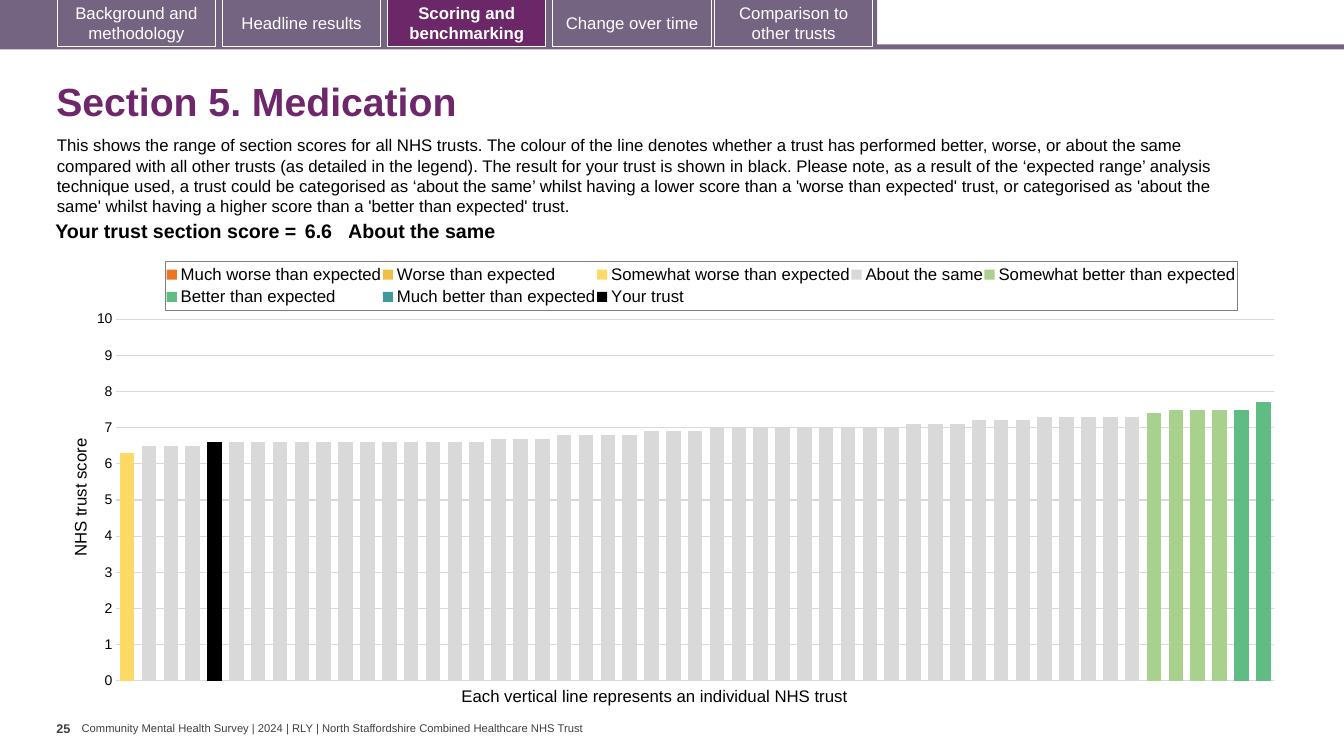
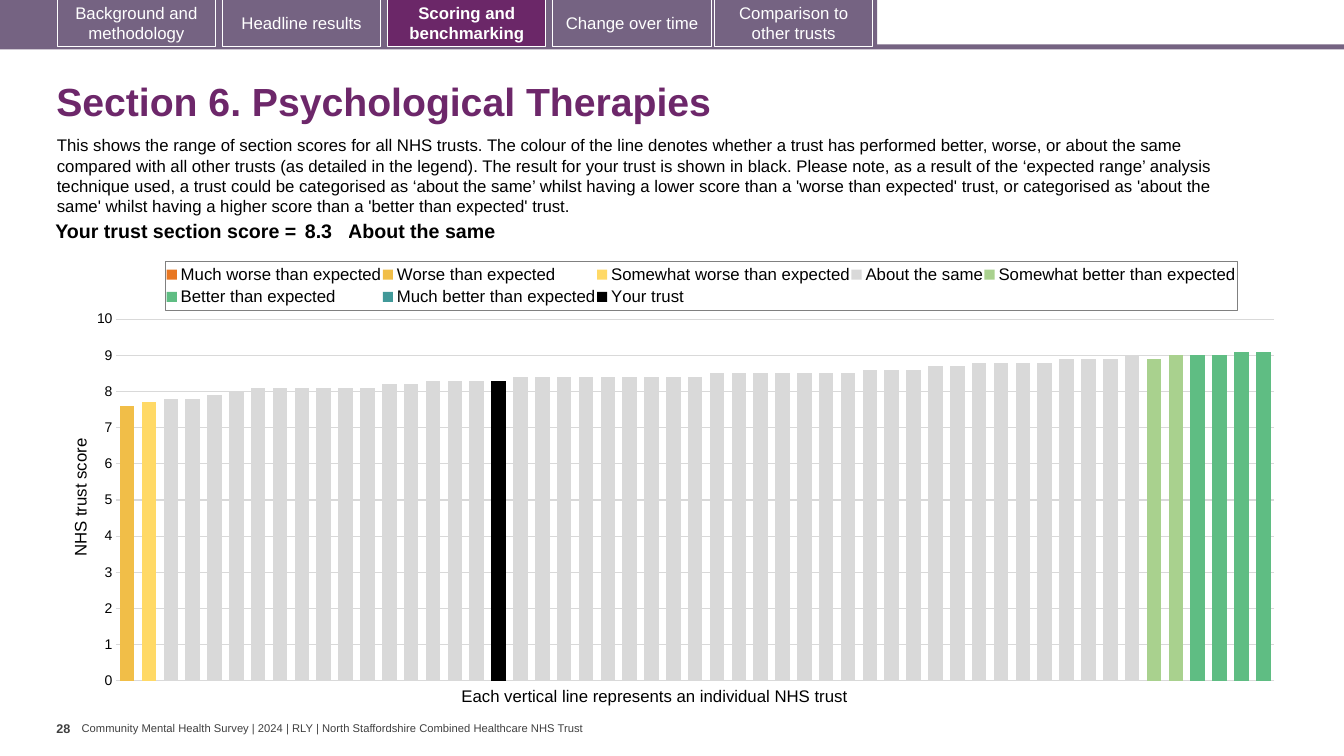
"""Builds two section score slides of a survey benchmark report."""
import copy
import dataclasses

import pptx
import pptx.chart.data
import pptx.dml.color
import pptx.enum.chart
import pptx.enum.shapes
import pptx.enum.text
import pptx.oxml
import pptx.oxml.ns
import pptx.util

Pt = pptx.util.Pt
qn = pptx.oxml.ns.qn
ALIGN = pptx.enum.text.PP_ALIGN
ANCHOR = pptx.enum.text.MSO_ANCHOR


@dataclasses.dataclass(frozen=True)
class Theme:
    """Colours, fonts and type sizes shared by the slides."""
    band: str = "756382"
    active: str = "6B2768"
    title: str = "6D276A"
    text: str = "000000"
    footer: str = "404040"
    grid: str = "D9D9D9"
    legend_line: str = "808080"
    white: str = "FFFFFF"
    font: str = "Arial"
    chart_font: str = "Calibri"
    title_size: int = 28
    score_size: int = 14
    body_size: int = 12
    axis_size: int = 10
    number_size: int = 9
    footer_size: int = 8


THEME = Theme()
TABS = [("Background and methodology", 41), ("Headline results", 159),
        ("Scoring and benchmarking", 277), ("Change over time", 395),
        ("Comparison to other trusts", 510.5)]
ACTIVE_TAB = "Scoring and benchmarking"
BAND_COLOURS = {
    "Much worse than expected": "E87722",
    "Worse than expected": "F1BE48",
    "Somewhat worse than expected": "FFD966",
    "About the same": "D9D9D9",
    "Somewhat better than expected": "A9D18E",
    "Better than expected": "5FBD83",
    "Much better than expected": "419999",
}
OWN_TRUST = "Your trust"
INTRO = (
    "This shows the range of section scores for all NHS trusts. The colour of the line denotes "
    "whether a trust has performed better, worse, or about the same compared with all other "
    "trusts (as detailed in the legend). The result for your trust is shown in black. Please "
    "note, as a result of the ‘expected range’ analysis technique used, a trust could be "
    "categorised as ‘about the same’ whilst having a lower score than a 'worse than expected' "
    "trust, or categorised as 'about the same' whilst having a higher score than a 'better than "
    "expected' trust.")
FOOTER = ("Community Mental Health Survey | 2024 | RLY | "
          "North Staffordshire Combined Healthcare NHS Trust")


@dataclasses.dataclass(frozen=True)
class Section:
    """One section: bands hold how many trusts have each score, in rank order."""
    title: str
    page: str
    score: float
    rank: int
    bands: dict
    verdict: str = "About the same"


SECTIONS = [
    Section("Section 5. Medication", "25", 6.6, 5, {
        "Somewhat worse than expected": {6.3: 1},
        "About the same": {6.5: 3, 6.6: 13, 6.7: 3, 6.8: 4, 6.9: 3, 7: 9, 7.1: 3, 7.2: 3, 7.3: 5},
        "Somewhat better than expected": {7.4: 1, 7.5: 3},
        "Better than expected": {7.5: 1, 7.7: 1},
    }),
    Section("Section 6. Psychological Therapies", "28", 8.3, 18, {
        "Worse than expected": {7.6: 1},
        "Somewhat worse than expected": {7.7: 1},
        "About the same": {7.8: 2, 7.9: 1, 8: 1, 8.1: 6, 8.2: 2, 8.3: 4, 8.4: 9, 8.5: 7,
                           8.6: 3, 8.7: 2, 8.8: 4, 8.9: 3, 9: 1},
        "Somewhat better than expected": {8.9: 1, 9: 1},
        "Better than expected": {9: 2, 9.1: 2},
    }),
]


def rgb(colour):
    """Return a colour object for a hex string."""
    return pptx.dml.color.RGBColor.from_string(colour)


def style_font(font, size, colour=THEME.text, bold=False, name=THEME.font):
    """Set the face, size, colour and weight of a font."""
    font.name, font.size, font.bold = name, Pt(size), bold
    font.color.rgb = rgb(colour)


def write(frame, text, size, colour=THEME.text, bold=False, align=ALIGN.LEFT):
    """Put one formatted paragraph in a text frame."""
    frame.text = text
    frame.word_wrap = True
    paragraph = frame.paragraphs[0]
    paragraph.alignment = align
    for run in paragraph.runs:
        style_font(run.font, size, colour, bold)


def set_margins(holder, across, down):
    """Set the side margins and the top and bottom margins of a frame or cell."""
    holder.margin_left = holder.margin_right = Pt(across)
    holder.margin_top = holder.margin_bottom = Pt(down)


def add_label(slide, box, text, size, colour=THEME.text, bold=False):
    """Add a text box and return its frame."""
    frame = slide.shapes.add_textbox(*map(Pt, box)).text_frame
    write(frame, text, size, colour, bold)
    return frame


def add_block(slide, box, colour, outline=None):
    """Add a filled rectangle."""
    block = slide.shapes.add_shape(pptx.enum.shapes.MSO_SHAPE.RECTANGLE, *map(Pt, box))
    block.shadow.inherit = False
    block.fill.solid()
    block.fill.fore_color.rgb = rgb(colour)
    if outline:
        block.line.color.rgb = rgb(outline)
        block.line.width = Pt(0.75)
    else:
        block.line.fill.background()
    return block


def add_navigation(slide, box):
    """Draw the tab bar with the current tab highlighted."""
    left, top, width, height = box
    add_block(slide, (left, top + height - 3.6, width, 3.6), THEME.band)
    add_block(slide, (left, top, 626.5, height - 1.5), THEME.band)
    for label, offset in TABS:
        current = label == ACTIVE_TAB
        tab = add_block(slide, (left + offset, top - 0.7, 113, height - 1.5),
                        THEME.active if current else THEME.band, THEME.white)
        write(tab.text_frame, label, THEME.body_size, THEME.white, current, ALIGN.CENTER)
        tab.text_frame.vertical_anchor = ANCHOR.MIDDLE


def add_heading(slide, box, text):
    """Place and format the title placeholder."""
    title = slide.shapes.title
    title.left, title.top, title.width, title.height = map(Pt, box)
    write(title.text_frame, text, THEME.title_size, THEME.title, True)
    title.text_frame.vertical_anchor = ANCHOR.MIDDLE
    title.text_frame.paragraphs[0].line_spacing = 0.9


def add_footer(slide, box, page):
    """Add the page number and the survey line."""
    left, top, width, height = box
    number = add_label(slide, (left, top, 18, height), page,
                       THEME.number_size, THEME.footer, True)
    set_margins(number, 0, 3.6)
    survey = add_label(slide, (left + 18, top + 4.3, width - 18, 9.5), FOOTER,
                       THEME.footer_size, THEME.footer)
    set_margins(survey, 0, 0)
    survey.vertical_anchor = ANCHOR.MIDDLE


def add_score_line(slide, box, section):
    """Add the one-row table with the score and verdict of the trust."""
    left, top, width, height = box
    table = slide.shapes.add_table(1, 3, *map(Pt, box)).table
    table.first_row = table.horz_banding = False
    table.rows[0].height = Pt(height)
    entries = [("Your trust section score =", 189.4, 2.9, ALIGN.RIGHT),
               (str(section.score), 33.8, 2.9, ALIGN.LEFT),
               (section.verdict, width - 223.2, 0, ALIGN.LEFT)]
    for index, (text, column_width, margin, align) in enumerate(entries):
        table.columns[index].width = Pt(column_width)
        cell = table.cell(0, index)
        cell.fill.background()
        set_margins(cell, margin, 2.9)
        write(cell.text_frame, text, THEME.score_size, bold=True, align=align)


def manual_layout(target="", **sizes):
    """Return a chart layout element placed by fractions of the chart."""
    inner = f'<c:layoutTarget val="{target}"/>' if target else ""
    modes = '<c:xMode val="edge"/><c:yMode val="edge"/>'
    values = "".join(f'<c:{key} val="{value}"/>' for key, value in sizes.items())
    return pptx.oxml.parse_xml(
        f'<c:layout {pptx.oxml.ns.nsdecls("c")}><c:manualLayout>'
        f'{inner}{modes}{values}</c:manualLayout></c:layout>')


def set_layout(parent, after, layout):
    """Replace the layout of a chart part, after the named child."""
    for old in parent.findall(qn("c:layout")):
        parent.remove(old)
    if after:
        parent.find(qn(after)).addnext(layout)
    else:
        parent.insert(0, layout)


def score_data(section):
    """Return chart data with a series for each band and one for the own trust."""
    total = sum(sum(counts.values()) for counts in section.bands.values())
    data = pptx.chart.data.CategoryChartData()
    data.categories = [str(rank) for rank in range(1, total + 1)]
    start = 0
    for band in BAND_COLOURS:
        scores = [score for score, count in section.bands.get(band, {}).items()
                  for _ in range(count)]
        data.add_series(band, [None] * start + scores + [None] * (total - start - len(scores)))
        start += len(scores)
    data.add_series(OWN_TRUST, [section.score if rank == section.rank else None
                                for rank in range(1, total + 1)])
    return data


def move_own_trust_to_second_axis(plot_area):
    """Give the last series its own bars and hidden axes in front of the others."""
    bars = plot_area.find(qn("c:barChart"))
    axes = [plot_area.find(qn(tag)) for tag in ("c:catAx", "c:valAx")]
    front_bars, front_categories, front_values = map(copy.deepcopy, [bars, *axes])
    ids = {axis.find(qn("c:axId")).get("val"): str(501 + index)
           for index, axis in enumerate(axes)}
    for part in (front_bars, front_categories, front_values):
        for node in part.iter(qn("c:axId"), qn("c:crossAx")):
            node.set("val", ids[node.get("val")])
    for series in front_bars.findall(qn("c:ser"))[:-1]:
        front_bars.remove(series)
    bars.remove(bars.findall(qn("c:ser"))[-1])
    front_values.find(qn("c:crosses")).set("val", "max")
    front_values.find(qn("c:tickLblPos")).set("val", "none")
    bars.addnext(front_bars)
    axes[1].addnext(front_values)
    front_values.addnext(front_categories)


def add_score_chart(slide, box, section):
    """Add the ranked column chart of trust scores."""
    chart = slide.shapes.add_chart(pptx.enum.chart.XL_CHART_TYPE.COLUMN_CLUSTERED,
                                   *map(Pt, box), score_data(section)).chart
    style_font(chart.font, THEME.axis_size, name=THEME.chart_font)
    chart.has_title = False
    plot = chart.plots[0]
    plot.gap_width, plot.overlap, plot.vary_by_categories = 50, 100, False
    for series, colour in zip(plot.series, [*BAND_COLOURS.values(), THEME.text]):
        series.format.fill.solid()
        series.format.fill.fore_color.rgb = rgb(colour)
    chart.category_axis.visible = False

    axis = chart.value_axis
    axis.minimum_scale, axis.maximum_scale, axis.major_unit = 0, 10, 1
    axis.major_tick_mark = pptx.enum.chart.XL_TICK_MARK.NONE
    axis.tick_label_position = pptx.enum.chart.XL_TICK_LABEL_POSITION.NEXT_TO_AXIS
    axis.format.line.fill.background()
    style_font(axis.tick_labels.font, THEME.axis_size)
    axis.has_major_gridlines = False
    plot_area = chart.element.find(".//" + qn("c:plotArea"))
    move_own_trust_to_second_axis(plot_area)
    set_layout(plot_area, None, manual_layout("inner", x=0.05, y=0.16, w=0.94, h=0.81))

    axis.has_major_gridlines = True
    axis.major_gridlines.format.line.color.rgb = rgb(THEME.grid)
    axis.major_gridlines.format.line.width = Pt(0.75)
    write(axis.axis_title.text_frame, "NHS trust score", THEME.body_size)
    set_layout(plot_area.find(".//" + qn("c:title")), "c:tx", manual_layout(x=0.01, y=0.42))
    add_legend(chart)


def add_legend(chart):
    """Add the outlined legend above the columns."""
    chart.has_legend = True
    chart.legend.position = pptx.enum.chart.XL_LEGEND_POSITION.TOP
    chart.legend.include_in_layout = False
    style_font(chart.legend.font, THEME.body_size)
    legend = chart.element.find(".//" + qn("c:legend"))
    set_layout(legend, "c:legendPos", manual_layout(x=0.09, y=0.03, w=0.87, h=0.11))
    legend.find(qn("c:overlay")).addnext(pptx.oxml.parse_xml(
        f'<c:spPr {pptx.oxml.ns.nsdecls("c", "a")}><a:ln w="9525"><a:solidFill>'
        f'<a:srgbClr val="{THEME.legend_line}"/></a:solidFill></a:ln></c:spPr>'))


def add_section_slide(deck, section):
    """Build one section score slide."""
    slide = deck.slides.add_slide(deck.slide_layouts.get_by_name("Title Only"))
    add_navigation(slide, (0, 0, 960, 35.3))
    add_heading(slide, (33, 48, 899, 52), section.title)
    add_footer(slide, (40.3, 511.2, 382, 28.8), section.page)
    add_label(slide, (33.5, 93, 873.5, 65.5), INTRO, THEME.body_size)
    add_label(slide, (322.5, 486, 296, 21.6), "Each vertical line represents an individual NHS trust",
              THEME.body_size)
    add_score_chart(slide, (39, 177, 880, 319), section)
    add_score_line(slide, (25.5, 154.8, 842, 22), section)


def main():
    """Build and save the deck."""
    deck = pptx.Presentation()
    deck.slide_width, deck.slide_height = Pt(960), Pt(540)
    for section in SECTIONS:
        add_section_slide(deck, section)
    deck.save("out.pptx")


if __name__ == "__main__":
    main()
